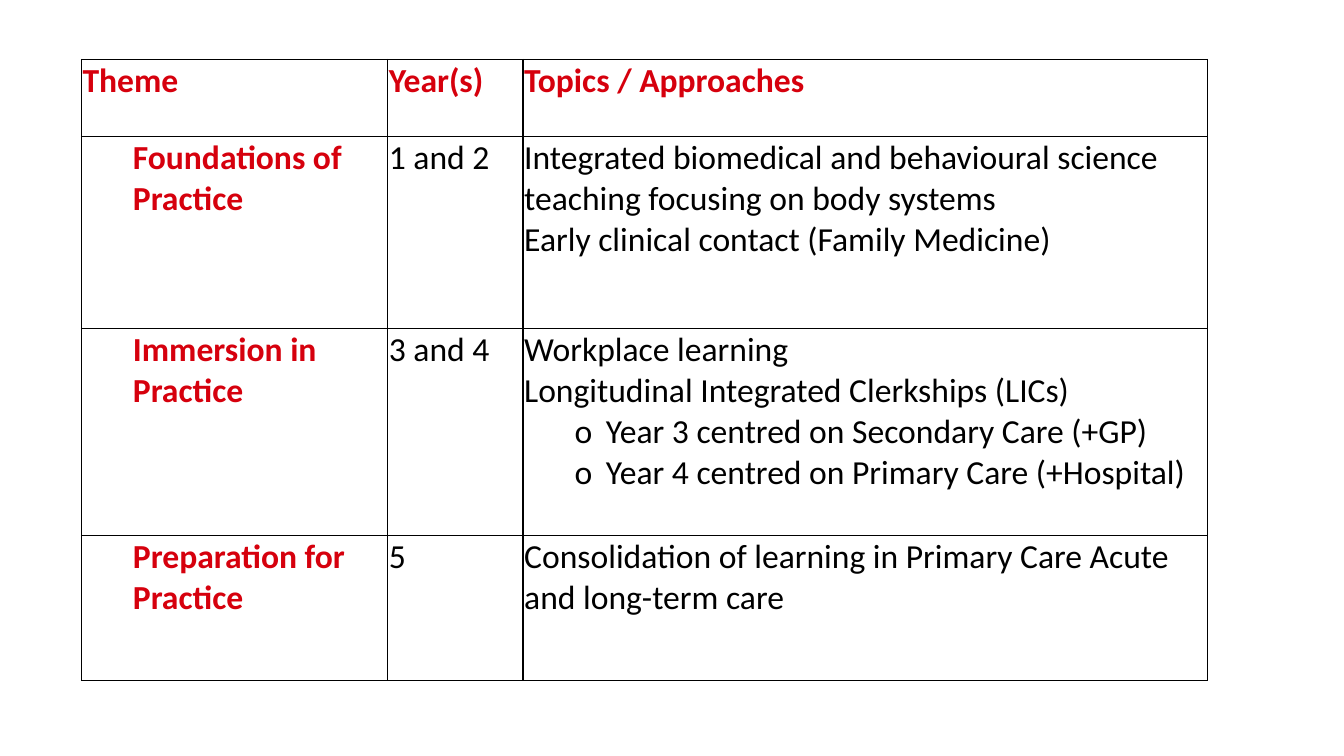
from lxml import etree
from pptx import Presentation
from pptx.dml.color import RGBColor
from pptx.oxml import ns
from pptx.util import Cm, Pt

RED = RGBColor(0xD6, 0x00, 0x0D)
BLACK = RGBColor(0, 0, 0)
FONT = "Calibri"
COLS = [7.72, 3.41, 17.25]
ROWS = [1.93, 4.85, 5.21, 3.66]
INSET = Cm(0.03)
INDENT = Cm(1.27)
BULLET = "o "

HEADS = ["Theme", "Year(s)", "Topics / Approaches"]
THEMES = [
    ("Foundations of Practice", "1 and 2", [
        "Integrated biomedical and behavioural science teaching focusing on body systems",
        "Early clinical contact (Family Medicine)"]),
    ("Immersion in Practice", "3 and 4", [
        "Workplace learning",
        "Longitudinal Integrated Clerkships (LICs)",
        BULLET + "Year 3 centred on Secondary Care (+GP)",
        BULLET + "Year 4 centred on Primary Care (+Hospital)"]),
    ("Preparation for Practice", "5", [
        "Consolidation of learning in Primary Care Acute and long-term care"]),
]


def add_border(cell):
    props = cell._tc.get_or_add_tcPr()
    for side in ("a:lnL", "a:lnR", "a:lnT", "a:lnB"):
        line = etree.SubElement(props, ns.qn(side), w=str(Pt(1)))
        fill = etree.SubElement(line, ns.qn("a:solidFill"))
        etree.SubElement(fill, ns.qn("a:srgbClr"), val=str(BLACK))


def set_indent(par, left, first=0):
    """Indent the paragraph; first is the offset of its first line."""
    props = par._p.get_or_add_pPr()
    props.set("marL", str(left))
    props.set("indent", str(first))
    return props


def add_bullet(par):
    props = set_indent(par, Cm(2.06), Cm(-0.79))
    etree.SubElement(props, ns.qn("a:buFont"), typeface=FONT)
    etree.SubElement(props, ns.qn("a:buChar"), char=BULLET.strip())


def fill_cell(cell, lines, color=BLACK, bold=False, left=0):
    cell.margin_left = cell.margin_right = INSET
    cell.margin_top = cell.margin_bottom = INSET
    add_border(cell)
    cell.fill.background()
    frame = cell.text_frame
    for i, line in enumerate(lines):
        par = frame.add_paragraph() if i else frame.paragraphs[0]
        par.text = line.removeprefix(BULLET)
        font = par.font
        font.name, font.size, font.bold = FONT, Pt(24), bold
        font.color.rgb = color
        if line.startswith(BULLET):
            par.level = 1
            add_bullet(par)
        elif left:
            par.level = 1
            set_indent(par, left)


def add_grid(slide):
    table = slide.shapes.add_table(
        len(ROWS), len(COLS), Cm(2.05), Cm(1.5),
        Cm(sum(COLS)), Cm(sum(ROWS))).table
    table.first_row = table.horz_banding = False
    for col, width in zip(table.columns, COLS):
        col.width = Cm(width)
    for row, height in zip(table.rows, ROWS):
        row.height = Cm(height)
    return table


def main():
    deck = Presentation()
    deck.slide_width, deck.slide_height = Cm(33.87), Cm(19.05)
    slide = deck.slides.add_slide(deck.slide_layouts[6])
    table = add_grid(slide)
    for col, head in enumerate(HEADS):
        fill_cell(table.cell(0, col), [head], RED, True)
    for row, (theme, years, topics) in enumerate(THEMES, 1):
        fill_cell(table.cell(row, 0), [theme], RED, True, INDENT)
        fill_cell(table.cell(row, 1), [years])
        fill_cell(table.cell(row, 2), topics)
    deck.save("out.pptx")


if __name__ == "__main__":
    main()
